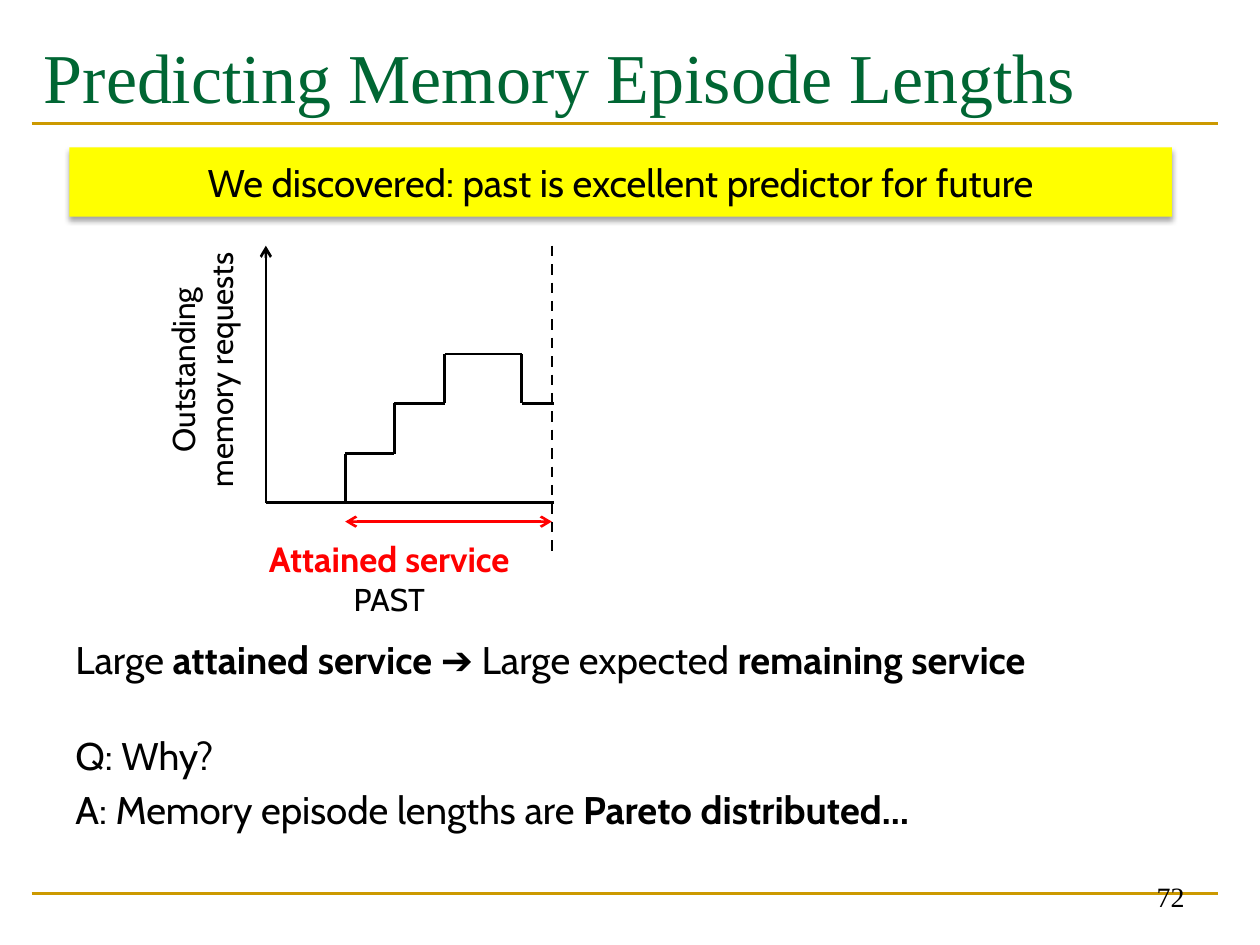
import itertools
from dataclasses import dataclass
import pptx
import pptx.dml.color
import pptx.enum.dml
import pptx.enum.shapes
import pptx.enum.text
import pptx.oxml
import pptx.oxml.ns
import pptx.util

ALIGN = pptx.enum.text.PP_ALIGN
ANCHOR = pptx.enum.text.MSO_ANCHOR
NS = pptx.oxml.ns.nsdecls("a")


@dataclass(frozen=True)
class Theme:
    serif: str = "Times New Roman"
    sans: str = "Cabin"
    green: str = "006633"
    gold: str = "CC9900"
    black: str = "000000"
    red: str = "FF0000"
    yellow: str = "FFFF00"
    title: int = 40
    body: int = 22
    strong: int = 20
    label: int = 18
    page: int = 16
    line: float = 1.5


LOOK = Theme()


def cell(num):
    """Length of grid cells; the slide has 100 columns and 75 rows."""
    return pptx.util.Inches(round(num / 10, 2))


def tint(code):
    return pptx.dml.color.RGBColor.from_string(code)


def style(para, size, color=LOOK.black, font=LOOK.sans, bold=False):
    for run in para.runs:
        run.font.size = pptx.util.Pt(size)
        run.font.name = font
        run.font.bold = bold
        run.font.color.rgb = tint(color)


def label(slide, box, text, size, color=LOOK.black, font=LOOK.sans,
          align=ALIGN.LEFT, anchor=ANCHOR.TOP):
    shape = slide.shapes.add_textbox(*map(cell, box))
    frame = shape.text_frame
    frame.word_wrap = True
    frame.vertical_anchor = anchor
    frame.text = text
    for para in frame.paragraphs:
        para.alignment = align
        style(para, size, color, font)
    return shape


def line(slide, start, end, color=LOOK.black, tips=(), dash=False):
    wire = slide.shapes.add_connector(
        pptx.enum.shapes.MSO_CONNECTOR.STRAIGHT, *map(cell, (*start, *end)))
    wire.line.color.rgb = tint(color)
    wire.line.width = pptx.util.Pt(LOOK.line)
    if dash:
        wire.line.dash_style = pptx.enum.dml.MSO_LINE.DASH
    props = wire.line._get_or_add_ln()
    for tip in tips:
        props.append(pptx.oxml.parse_xml(f'<a:{tip} {NS} type="arrow"/>'))
    wire._element.spPr.append(pptx.oxml.parse_xml(f"<a:effectLst {NS}/>"))


def header(slide, box):
    left, top, wide, high = box
    shape = label(slide, box, "Predicting Memory Episode Lengths",
                  LOOK.title, LOOK.green, LOOK.serif)
    shape.text_frame.margin_top = cell(1)
    rule = top + 8.1
    line(slide, (left, rule), (left + wide, rule), LOOK.gold)


def footer(slide, box):
    left, top, wide, high = box
    rule = top + 2.9
    line(slide, (left, rule), (left + wide, rule), LOOK.gold)
    label(slide, (left + wide - 25, top, 23.3, high), "72", LOOK.page,
          font=LOOK.serif, align=ALIGN.RIGHT, anchor=ANCHOR.BOTTOM)


def banner(slide, box):
    shape = slide.shapes.add_shape(
        pptx.enum.shapes.MSO_SHAPE.RECTANGLE, *map(cell, box))
    shape.fill.solid()
    shape.fill.fore_color.rgb = tint(LOOK.yellow)
    shape.line.fill.background()
    # Soft shadow straight below
    shape._element.spPr.append(pptx.oxml.parse_xml(
        f'<a:effectLst {NS}><a:outerShdw blurRad="{pptx.util.Pt(3.1)}" '
        f'dist="{pptx.util.Pt(1.8)}" dir="5400000" rotWithShape="0">'
        f'<a:srgbClr val="{LOOK.black}"><a:alpha val="35000"/></a:srgbClr>'
        '</a:outerShdw></a:effectLst>'))
    frame = shape.text_frame
    frame.text = "We discovered: past is excellent predictor for future"
    frame.vertical_anchor = ANCHOR.MIDDLE
    para = frame.paragraphs[0]
    para.alignment = ALIGN.CENTER
    style(para, LOOK.body)


def graph(slide, box):
    left, top, wide, high = box
    base, right = top + high, left + wide
    now = right - 0.2

    # Axes
    line(slide, (left, base), (left, top), tips=["tailEnd"])
    line(slide, (left, base), (right, base))

    # Staircase: each level holds from its column to the next
    step = 3.93
    begin = left + 6.3
    cols = [begin, begin + step, begin + 2 * step, left + 20.3, right]
    dots = [(begin, base)]
    for rank, (near, far) in zip((1, 2, 3, 2), itertools.pairwise(cols)):
        level = base - rank * step
        dots += [(near, level), (far, level)]
    for start, end in itertools.pairwise(dots):
        line(slide, start, end)

    # Present moment and attained span
    line(slide, (now, top), (now, base + 3.9), dash=True)
    line(slide, (begin, base + 1.5), (now, base + 1.5), LOOK.red,
         tips=["headEnd", "tailEnd"])

    # Labels
    side = label(slide, (left - 16.4, top + 6.3, 22.7, 7.1),
                 "Outstanding\nmemory requests", LOOK.label,
                 align=ALIGN.CENTER)
    side.rotation = 270
    span = label(slide, (now - 25.8, base + 2.3, 25.8, 7.4),
                 "Attained service\nPAST", LOOK.label, align=ALIGN.CENTER)
    style(span.text_frame.paragraphs[0], LOOK.strong, LOOK.red, bold=True)


def notes(slide, box):
    # Each row: space before, then plain and bold parts in turn
    rows = [
        (0, ["Large ", "attained service ", "➔ Large expected ",
             "remaining service"]),
        (28.5, ["Q: Why?"]),
        (4.5, ["A: Memory episode lengths are ", "Pareto distributed…"]),
    ]
    frame = slide.shapes.add_textbox(*map(cell, box)).text_frame
    frame.word_wrap = True
    for rank, (gap, parts) in enumerate(rows):
        para = frame.add_paragraph() if rank else frame.paragraphs[0]
        para.space_before = pptx.util.Pt(gap)
        for part in parts:
            para.add_run().text = part
        style(para, LOOK.body)
        for run in para.runs[1::2]:
            run.font.bold = True


def main():
    deck = pptx.Presentation()
    deck.slide_width, deck.slide_height = cell(100), cell(75)
    slide = deck.slides.add_slide(deck.slide_layouts[6])
    header(slide, (2.5, 1.7, 94.2, 11.7))
    banner(slide, (5.5, 11.7, 87.5, 5.5))
    graph(slide, (21.1, 19.5, 22.9, 20.4))
    notes(slide, (5, 50, 90, 18))
    footer(slide, (2.5, 68, 94.2, 5))
    deck.save("out.pptx")


if __name__ == "__main__":
    main()
